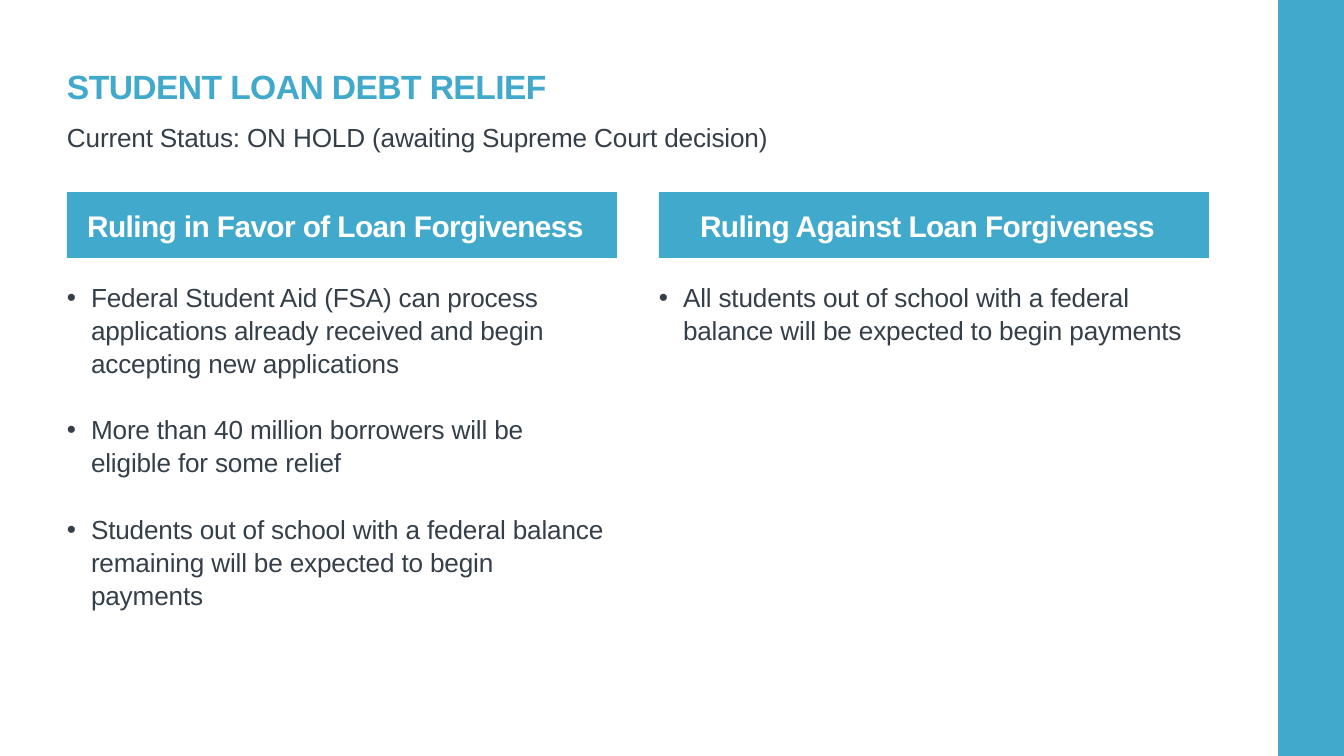
import pptx
import pptx.dml.color
import pptx.enum.shapes
import pptx.enum.text
import pptx.oxml.ns
import pptx.util
from lxml import etree

COLORS = {"blue": "41A9CC", "ink": "353F49", "white": "FFFFFF"}
EMU_PER_PX = 914400 / 134.4
PAGE_WIDTH, PAGE_HEIGHT = 1344, 756
INDENT = 24

ALIGN = pptx.enum.text.PP_ALIGN
ANCHOR = pptx.enum.text.MSO_ANCHOR
TITLE = {"size": 18, "bold": True, "color": "blue", "tracking": -30}
HEADING = {"size": 16, "bold": True, "color": "white", "tracking": -30}
BODY = {"size": 14, "bold": False, "color": "ink", "tracking": -10}

COLUMNS = [
    ("Ruling in Favor of Loan Forgiveness", [
        "Federal Student Aid (FSA) can process applications already received "
        "and begin accepting new applications",
        "More than 40 million borrowers will be eligible for some relief",
        "Students out of school with a federal balance remaining will be "
        "expected to begin payments",
    ]),
    ("Ruling Against Loan Forgiveness", [
        "All students out of school with a federal balance will be expected "
        "to begin payments",
    ]),
]


def px(length):
    """Turn a length in px into EMU."""
    return pptx.util.Emu(round(length * EMU_PER_PX))


def rgb(name):
    """Look up a named colour."""
    return pptx.dml.color.RGBColor.from_string(COLORS[name])


def set_values(target, values):
    """Set each attribute in a dict of format values."""
    for name, value in values.items():
        setattr(target, name, value)


def place(shape, box):
    """Move a shape to a left, top, width, height box in px."""
    set_values(shape, dict(zip(("left", "top", "width", "height"), map(px, box))))


def add_bullet(para):
    """Give a paragraph a round bullet with a hanging indent."""
    properties = para._p.get_or_add_pPr()
    properties.set("marL", str(px(INDENT)))
    properties.set("indent", str(px(-INDENT)))
    bullet = etree.SubElement(properties, pptx.oxml.ns.qn("a:buChar"))
    bullet.set("char", "•")


def write(shape, texts, style, anchor=ANCHOR.TOP, align=ALIGN.LEFT,
          spacing=1.0, bulleted=False):
    """Fill a shape with styled paragraphs."""
    frame = shape.text_frame
    set_values(frame, {
        "word_wrap": True, "auto_size": pptx.enum.text.MSO_AUTO_SIZE.NONE,
        "vertical_anchor": anchor, "margin_left": 0, "margin_right": px(13),
        "margin_top": px(7), "margin_bottom": px(7),
    })
    for index, text in enumerate(texts):
        para = frame.add_paragraph() if index else frame.paragraphs[0]
        if bulleted:
            add_bullet(para)
        set_values(para, {
            "alignment": align, "line_spacing": spacing,
            "space_before": pptx.util.Pt(6 if index else 0),
            "space_after": pptx.util.Pt(12 if index < len(texts) - 1 else 0),
        })
        span = para.add_run()
        span.text = text
        set_values(span.font, {
            "name": "Arial", "size": pptx.util.Pt(style["size"]),
            "bold": style["bold"],
        })
        span.font.color.rgb = rgb(style["color"])
        span._r.get_or_add_rPr().set("spc", str(style["tracking"]))


def add_side_bar(page, box):
    """Draw the plain colour band in the given box."""
    bar = page.shapes.add_shape(
        pptx.enum.shapes.MSO_SHAPE.RECTANGLE, *map(px, box))
    bar.shadow.inherit = False
    bar.fill.solid()
    bar.fill.fore_color.rgb = rgb("blue")
    bar.line.fill.background()


def add_masthead(page, box):
    """Place the title with the status line under it."""
    left, top, width, height = box
    title_height = 106
    title = page.shapes.title
    place(title, (left, top, width, title_height))
    write(title, ["STUDENT LOAN DEBT RELIEF"], TITLE, ANCHOR.BOTTOM)
    status_box = (left, top + title_height, width, height - title_height)
    status = page.shapes.add_textbox(*map(px, status_box))
    write(status, ["Current Status: ON HOLD (awaiting Supreme Court decision)"],
          BODY, spacing=1.05)


def add_column(heading, listing, box, title, points):
    """Place a filled heading with its bullet list below."""
    left, top, width, height = box
    heading_height, list_offset = 66, 81
    place(heading, (left, top, width, heading_height))
    heading.fill.solid()
    heading.fill.fore_color.rgb = rgb("blue")
    write(heading, [title], HEADING, ANCHOR.MIDDLE, ALIGN.CENTER, 1.05)
    place(listing, (left, top + list_offset, width, height - list_offset))
    write(listing, points, BODY, spacing=1.05, bulleted=True)


def main():
    """Build and save the deck."""
    deck = pptx.Presentation()
    set_values(deck, {"slide_width": px(PAGE_WIDTH),
                      "slide_height": px(PAGE_HEIGHT)})
    page = deck.slides.add_slide(deck.slide_layouts.get_by_name("Comparison"))
    margin, content_width, gap, bar_width = 67, 1142, 42, 66
    add_side_bar(page, (PAGE_WIDTH - bar_width, 0, bar_width, PAGE_HEIGHT))
    add_masthead(page, (margin, 7, content_width, 153))
    column_width = (content_width - gap) // 2
    holders = list(page.placeholders)[1:]
    for index, (title, points) in enumerate(COLUMNS):
        heading, listing = holders[2 * index:2 * index + 2]
        left = margin + index * (column_width + gap)
        add_column(heading, listing, (left, 192, column_width, 484), title, points)
    deck.save("out.pptx")


if __name__ == "__main__":
    main()
